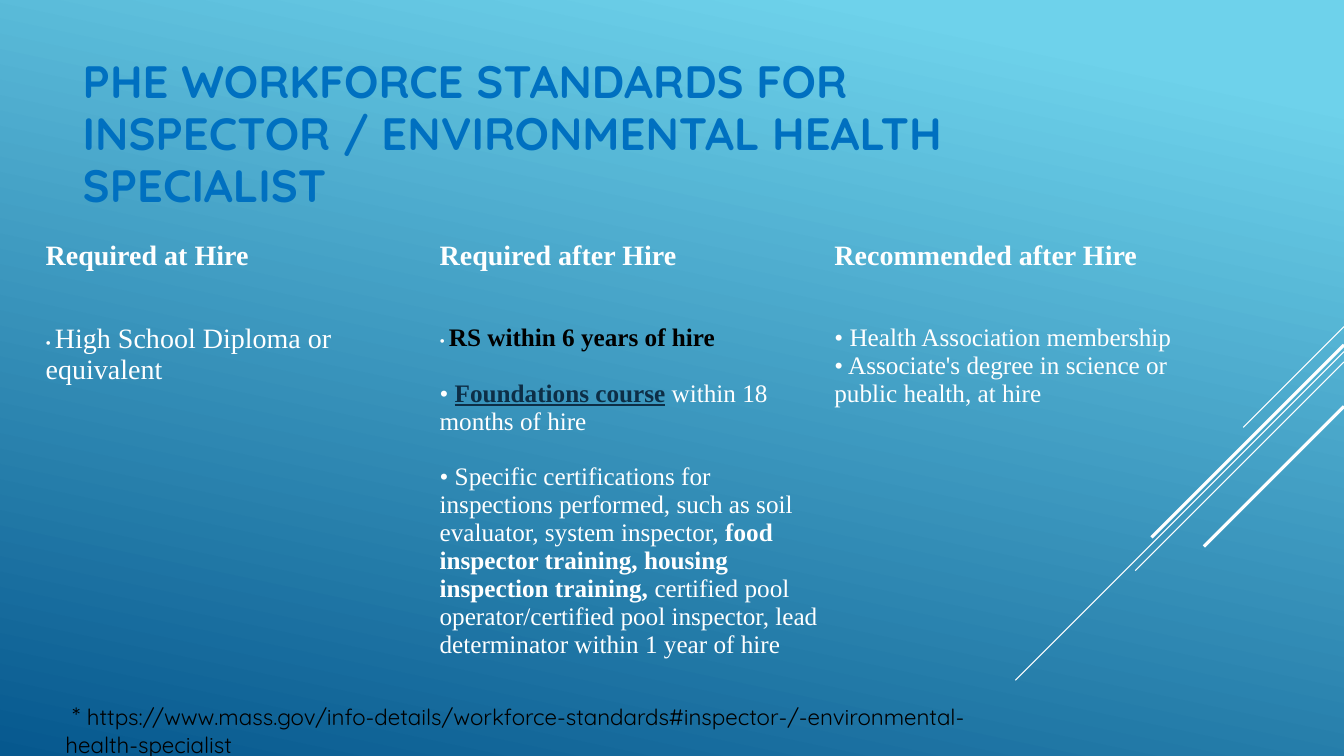
from dataclasses import dataclass

from lxml import etree
from pptx import Presentation
from pptx.dml.color import RGBColor
from pptx.enum.shapes import MSO_CONNECTOR
from pptx.enum.text import MSO_ANCHOR, PP_ALIGN
from pptx.oxml.ns import qn
from pptx.util import Cm, Pt

WHITE = RGBColor(0xFF, 0xFF, 0xFF)
BLACK = RGBColor(0x00, 0x00, 0x00)
TITLE_BLUE = RGBColor(0x00, 0x70, 0xC0)
COURSE_NAVY = RGBColor(0x0D, 0x2E, 0x46)
SKY = RGBColor(0x6E, 0xD2, 0xEB)
DEEP_BLUE = RGBColor(0x06, 0x58, 0x8E)

HEADING_FONT = "Quicksand"
BODY_FONT = "Times New Roman"
STRAIGHT = MSO_CONNECTOR.STRAIGHT
LEFT = PP_ALIGN.LEFT
TOP = MSO_ANCHOR.TOP
MIDDLE = MSO_ANCHOR.MIDDLE
PLAIN_TABLE_STYLE = "{2D5ABB26-0587-4C30-8999-92F81FD0307C}"

SLIDE_WIDTH, SLIDE_HEIGHT = 33.87, 19.05
TITLE_ONLY = 5


@dataclass
class Span:
    text: str
    size: float = 18
    bold: bool = False
    color: RGBColor = WHITE
    underline: bool = False
    font: str = BODY_FONT


@dataclass
class Para:
    spans: list[Span]
    gap: float = 0
    line_spacing: float = 1.0


@dataclass
class Column:
    heading: str
    requirements: list[Para]
    inset: float = 0.16


@dataclass
class Ray:
    """A 45 degree line falling leftwards from the right edge (cm)."""
    top: float
    run: float
    weight: float = 0.75


RAYS = [
    Ray(8.23, 2.54),
    Ray(8.86, 8.28),
    Ray(9.12, 5.26),
    Ray(8.69, 4.85, 2.25),
    Ray(10.24, 3.53, 2.25),
]

TITLE = Para([Span("PHE WORKFORCE STANDARDS FOR INSPECTOR / ENVIRONMENTAL HEALTH SPECIALIST",
                   32.4, True, TITLE_BLUE, font=HEADING_FONT)], line_spacing=0.96)

COLUMNS = [
    Column("Required at Hire", [
        Para([Span("• ", 11), Span("High School Diploma or equivalent", 20)]),
    ], inset=0.18),
    Column("Required after Hire", [
        Para([Span("• ", 11), Span("RS within 6 years of hire", bold=True, color=BLACK)]),
        Para([Span("• "),
              Span("Foundations course", bold=True, color=COURSE_NAVY, underline=True),
              Span(" within 18 months of hire")], gap=20),
        Para([Span("• Specific certifications for inspections performed, such as soil "
                   "evaluator, system inspector, "),
              Span("food inspector training, housing inspection training, ", bold=True),
              Span("certified pool operator/certified pool inspector, lead determinator "
                   "within 1 year of hire")], gap=20),
    ]),
    Column("Recommended after Hire", [
        Para([Span("• Health Association membership")]),
        Para([Span("• Associate's degree in science or public health, at hire")]),
    ]),
]

FOOTNOTE = Para([
    Span(" * ", 18, color=BLACK, font=HEADING_FONT),
    Span("https://www.mass.gov/info-details/workforce-standards"
         "#inspector-/-environmental-health-specialist", 16, color=BLACK, font=HEADING_FONT),
])


def write(frame, paras: list[Para]) -> None:
    frame.word_wrap = True
    for index, para in enumerate(paras):
        paragraph = frame.add_paragraph() if index else frame.paragraphs[0]
        paragraph.alignment = LEFT
        paragraph.space_before = Pt(para.gap)
        paragraph.line_spacing = para.line_spacing
        for span in para.spans:
            run = paragraph.add_run()
            run.text = span.text
            run.font.name = span.font
            run.font.size = Pt(span.size)
            run.font.bold = span.bold
            run.font.underline = span.underline
            run.font.color.rgb = span.color


def paint_background(slide) -> None:
    fill = slide.background.fill
    fill.gradient()
    fill.gradient_angle = 258
    for stop, (position, color) in zip(fill.gradient_stops, [(0.1, SKY), (1.0, DEEP_BLUE)]):
        stop.position = position
        stop.color.rgb = color


def draw_ray(slide, ray: Ray) -> None:
    line = slide.shapes.add_connector(
        STRAIGHT, Cm(SLIDE_WIDTH), Cm(ray.top),
        Cm(SLIDE_WIDTH - ray.run), Cm(ray.top + ray.run))
    line.line.color.rgb = WHITE
    line.line.width = Pt(ray.weight)
    etree.SubElement(line._element.spPr, qn("a:effectLst"))


def fill_cell(cell, paras: list[Para], inset: float) -> None:
    cell.fill.background()
    cell.vertical_anchor = TOP
    cell.margin_left = Cm(inset)
    write(cell.text_frame, paras)


def draw_standards(slide, columns: list[Column]) -> None:
    column_width, row_heights = 9.95, (2.11, 9.58)
    table = slide.shapes.add_table(
        len(row_heights), len(columns), Cm(0.97), Cm(5.92),
        Cm(column_width * len(columns)), Cm(sum(row_heights))).table
    table.first_row = table.horz_banding = False
    table._tbl.tblPr.find(qn("a:tableStyleId")).text = PLAIN_TABLE_STYLE
    for row, height in zip(table.rows, row_heights):
        row.height = Cm(height)
    for index, column in enumerate(columns):
        table.columns[index].width = Cm(column_width)
        heading = Para([Span(column.heading, 20, True)])
        fill_cell(table.cell(0, index), [heading], column.inset)
        fill_cell(table.cell(1, index), column.requirements, column.inset)


def main() -> None:
    deck = Presentation()
    deck.slide_width, deck.slide_height = Cm(SLIDE_WIDTH), Cm(SLIDE_HEIGHT)
    slide = deck.slides.add_slide(deck.slide_layouts[TITLE_ONLY])

    # Background and diagonal rays
    paint_background(slide)
    for ray in RAYS:
        draw_ray(slide, ray)

    # Title
    title = slide.shapes.title
    title.left, title.top, title.width, title.height = Cm(1.83), Cm(1.3), Cm(23.7), Cm(4.19)
    title.text_frame.vertical_anchor = MIDDLE
    write(title.text_frame, [TITLE])

    # Standards by time of hire
    draw_standards(slide, COLUMNS)

    # Source footnote
    footnote = slide.shapes.add_textbox(Cm(1.4), Cm(17.53), Cm(24.61), Cm(1.02))
    write(footnote.text_frame, [FOOTNOTE])

    deck.save("out.pptx")


if __name__ == "__main__":
    main()
